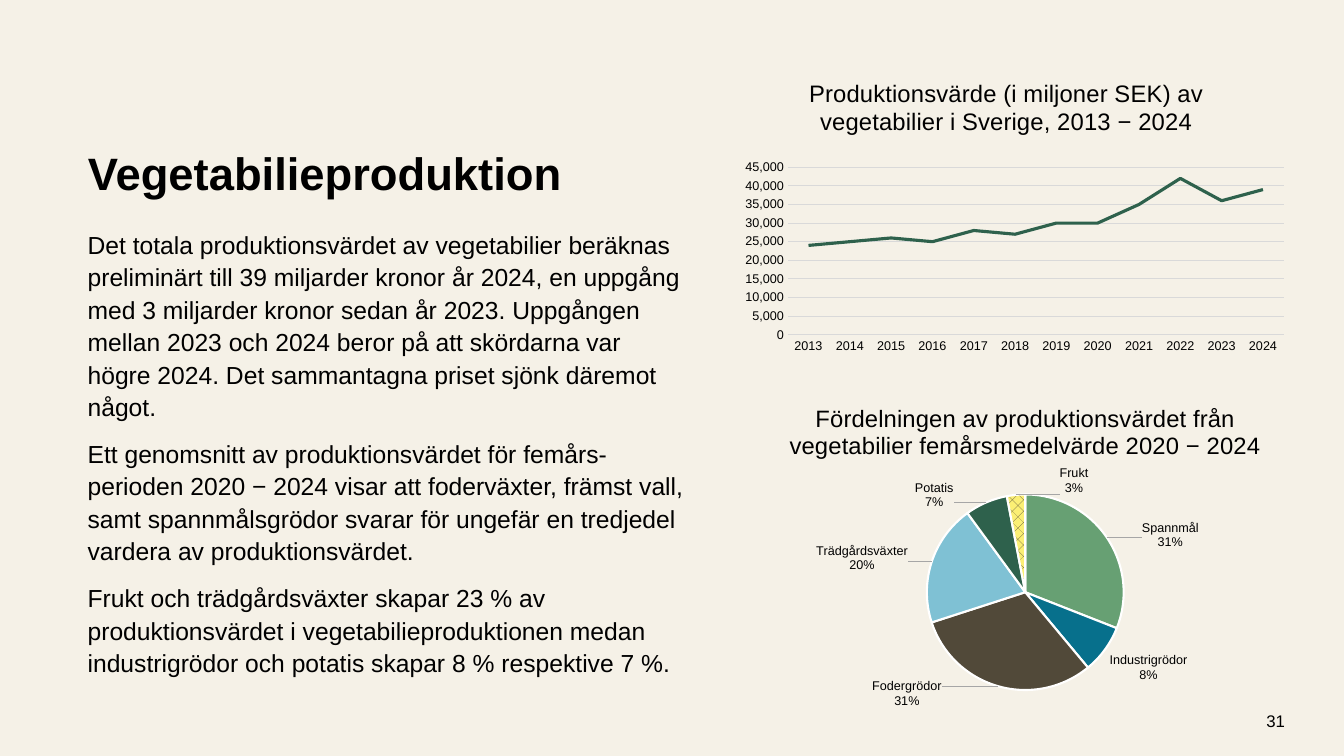
from lxml import etree
from pptx import Presentation
from pptx.chart.data import CategoryChartData
from pptx.dml.color import RGBColor
from pptx.enum.chart import XL_CHART_TYPE, XL_LABEL_POSITION, XL_TICK_MARK
from pptx.enum.dml import MSO_PATTERN
from pptx.enum.text import MSO_ANCHOR, MSO_AUTO_SIZE, PP_ALIGN
from pptx.oxml import parse_xml
from pptx.oxml.ns import nsdecls, qn
from pptx.util import Pt

LINE, PIE = XL_CHART_TYPE.LINE, XL_CHART_TYPE.PIE
OUTSIDE = XL_LABEL_POSITION.OUTSIDE_END
NO_TICK = XL_TICK_MARK.NONE
HATCH = MSO_PATTERN.PERCENT_25
TOP, MIDDLE = MSO_ANCHOR.TOP, MSO_ANCHOR.MIDDLE
LEFT, RIGHT = PP_ALIGN.LEFT, PP_ALIGN.RIGHT
NO_FIT = MSO_AUTO_SIZE.NONE

HEX = {"paper": "F5F1E7", "ink": "000000", "grid": "D9D9D9", "edge": "FFFFFF",
       "lead": "A6A6A6", "pine": "2E614C", "leaf": "67A073", "sea": "07708C",
       "soil": "514939", "sky": "7FC1D4", "sun": "FBEF74"}
RGB = {name: RGBColor.from_string(code) for name, code in HEX.items()}


def style(font, size, bold=False):
    font.name, font.size, font.bold = "Arial", Pt(size), bold
    font.color.rgb = RGB["ink"]


def layout(**parts):
    """Return a manual chart layout, in shares of the chart's size."""
    node = etree.Element(qn("c:layout"))
    manual = etree.SubElement(node, qn("c:manualLayout"))
    for tag, val in parts.items():
        etree.SubElement(manual, qn("c:" + tag)).set("val", str(val))
    return node


deck = Presentation()
deck.slide_width, deck.slide_height = Pt(960), Pt(540)
slide = deck.slides.add_slide(deck.slide_layouts[5])
slide.background.fill.solid()
slide.background.fill.fore_color.rgb = RGB["paper"]

# Text
title = slide.shapes.title
title.left, title.top, title.width, title.height = Pt(55.5), Pt(104.5), Pt(424), Pt(54)
body = slide.shapes.add_textbox(Pt(55.5), Pt(158.5), Pt(444), Pt(342))
page = slide.shapes.add_textbox(Pt(841.5), Pt(500.5), Pt(83.5), Pt(29))

title.text_frame.text = "Vegetabilieproduktion"
body.text_frame.text = "\n".join([
    "Det totala produktionsvärdet av vegetabilier beräknas preliminärt till 39 miljarder "
    "kronor år 2024, en uppgång med 3 miljarder kronor sedan år 2023. Uppgången mellan 2023 "
    "och 2024 beror på att skördarna var högre 2024. Det sammantagna priset sjönk däremot "
    "något.",
    "Ett genomsnitt av produktionsvärdet för femårs-perioden 2020 − 2024 visar att "
    "foderväxter, främst vall, samt spannmålsgrödor svarar för ungefär en tredjedel vardera "
    "av produktionsvärdet.",
    "Frukt och trädgårdsväxter skapar 23 % av produktionsvärdet i vegetabilieproduktionen "
    "medan industrigrödor och potatis skapar 8 % respektive 7 %."])
page.text_frame.text = "31"

for box, size, bold, pitch, anchor, side in [(title, 32.4, True, 0.9, TOP, LEFT),
                                             (body, 17.6, False, 1.1, TOP, LEFT),
                                             (page, 12, False, 1, MIDDLE, RIGHT)]:
    frame = box.text_frame
    frame.word_wrap, frame.auto_size, frame.vertical_anchor = True, NO_FIT, anchor
    for i, para in enumerate(frame.paragraphs):
        para.alignment, para.line_spacing = side, pitch
        para.space_before = Pt(10 if i else 0)
        for run in para.runs:
            style(run.font, size, bold)

# Charts
value = CategoryChartData(number_format="#,##0")
value.categories = [str(year) for year in range(2013, 2025)]
value.add_series("Series 1", [1000 * n for n in
                              (24, 25, 26, 25, 28, 27, 30, 30, 35, 42, 36, 39)])

# Crop, share, colour, label shift
crops = [("Spannmål", 31, "leaf", (0.05, 0.05)),
         ("Industrigrödor", 8, "sea", None),
         ("Fodergrödor", 31, "soil", (-0.09, -0.04)),
         ("Trädgårdsväxter", 20, "sky", (-0.03, 0.04)),
         ("Potatis", 7, "pine", (-0.05, 0.04)),
         ("Frukt", 3, None, (0.12, 0.02))]
share = CategoryChartData(number_format="#,##0")
share.categories = [crop[0] for crop in crops]
share.add_series("Series 1", [crop[1] for crop in crops])

charts = []
for kind, data, place, head, plot in [
        (LINE, value, (522.5, 52.5, 402.5, 203),
         "Produktionsvärde (i miljoner SEK) av vegetabilier i Sverige, 2013 − 2024",
         (0.1, 0.33, 0.88, 0.59)),
        (PIE, share, (504.5, 284.5, 434, 230.5),
         "Fördelningen av produktionsvärdet från vegetabilier femårsmedelvärde 2020 − 2024",
         (0.35, 0.3, 0.35, 0.61))]:
    chart = slide.shapes.add_chart(kind, *map(Pt, place), data).chart
    style(chart.font, 10)
    chart.has_legend = False
    chart.has_title = True
    label = chart.chart_title.text_frame
    label.text = head
    style(label.paragraphs[0].runs[0].font, 17)
    node = chart.chart_title._element
    for old in node.findall(qn("c:layout")):
        node.remove(old)
    node.find(qn("c:tx")).addnext(layout(xMode="edge", yMode="edge", x=0.13, y=0))
    area = chart._chartSpace.chart.plotArea
    for old in area.findall(qn("c:layout")):
        area.remove(old)
    area.insert(0, layout(layoutTarget="inner", xMode="edge", yMode="edge",
                          **dict(zip("xywh", plot))))
    charts.append(chart)
trend, pie = charts

# Line chart
years, scale = trend.category_axis, trend.value_axis
for axis in (years, scale):
    axis.major_tick_mark = axis.minor_tick_mark = NO_TICK
    style(axis.tick_labels.font, 9)
scale.minimum_scale, scale.maximum_scale, scale.major_unit = 0, 45000, 5000
scale.tick_labels.number_format = "#,##0"
scale.tick_labels.number_format_is_linked = False
scale.format.line.fill.background()
for line in (years.format.line, scale.major_gridlines.format.line):
    line.width, line.color.rgb = Pt(0.75), RGB["grid"]
trend.plots[0].vary_by_categories = False
curve = trend.plots[0].series[0]
curve.smooth = False
curve.format.line.width, curve.format.line.color.rgb = Pt(2.25), RGB["pine"]

# Pie chart
pie.plots[0].vary_by_categories = True
ring = pie.plots[0].series[0]
tags = ring.data_labels
tags.show_value, tags.show_category_name, tags.show_percentage = False, True, True
tags.number_format, tags.number_format_is_linked = "0%", False
tags.position = OUTSIDE
style(tags.font, 9)
for i, (name, part, hue, shift) in enumerate(crops):
    point = ring.points[i]
    fill, rim = point.format.fill, point.format.line
    if hue:
        fill.solid()
        fill.fore_color.rgb = RGB[hue]
    else:
        fill.patterned()
        fill.pattern = HATCH
        fill.fore_color.rgb, fill.back_color.rgb = RGB["soil"], RGB["sun"]
    rim.width, rim.color.rgb = Pt(1.5), RGB["edge"]
    if shift:
        tag = point.data_label
        tag.position = OUTSIDE
        style(tag.font, 9)

group = tags._element
for node in group.findall(qn("c:dLbl")):
    shift = crops[int(node.find(qn("c:idx")).get("val"))][3]
    node.find(qn("c:idx")).addnext(layout(x=shift[0], y=shift[1]))
    for key, val in (("Val", "0"), ("CatName", "1"), ("Percent", "1")):
        node.find(qn("c:show" + key)).set("val", val)
for node in [group, *group.findall(qn("c:dLbl"))]:
    gap = etree.Element(qn("c:separator"))
    gap.text = "\n"
    node.find(qn("c:showBubbleSize")).addnext(gap)
for old in group.findall(qn("c:showLeaderLines")):
    group.remove(old)
etree.SubElement(group, qn("c:showLeaderLines")).set("val", "1")
group.append(parse_xml(
    f'<c:leaderLines {nsdecls("c", "a")}><c:spPr><a:ln w="9525"><a:solidFill>'
    f'<a:srgbClr val="{HEX["lead"]}"/></a:solidFill></a:ln></c:spPr></c:leaderLines>'))

deck.save("out.pptx")
